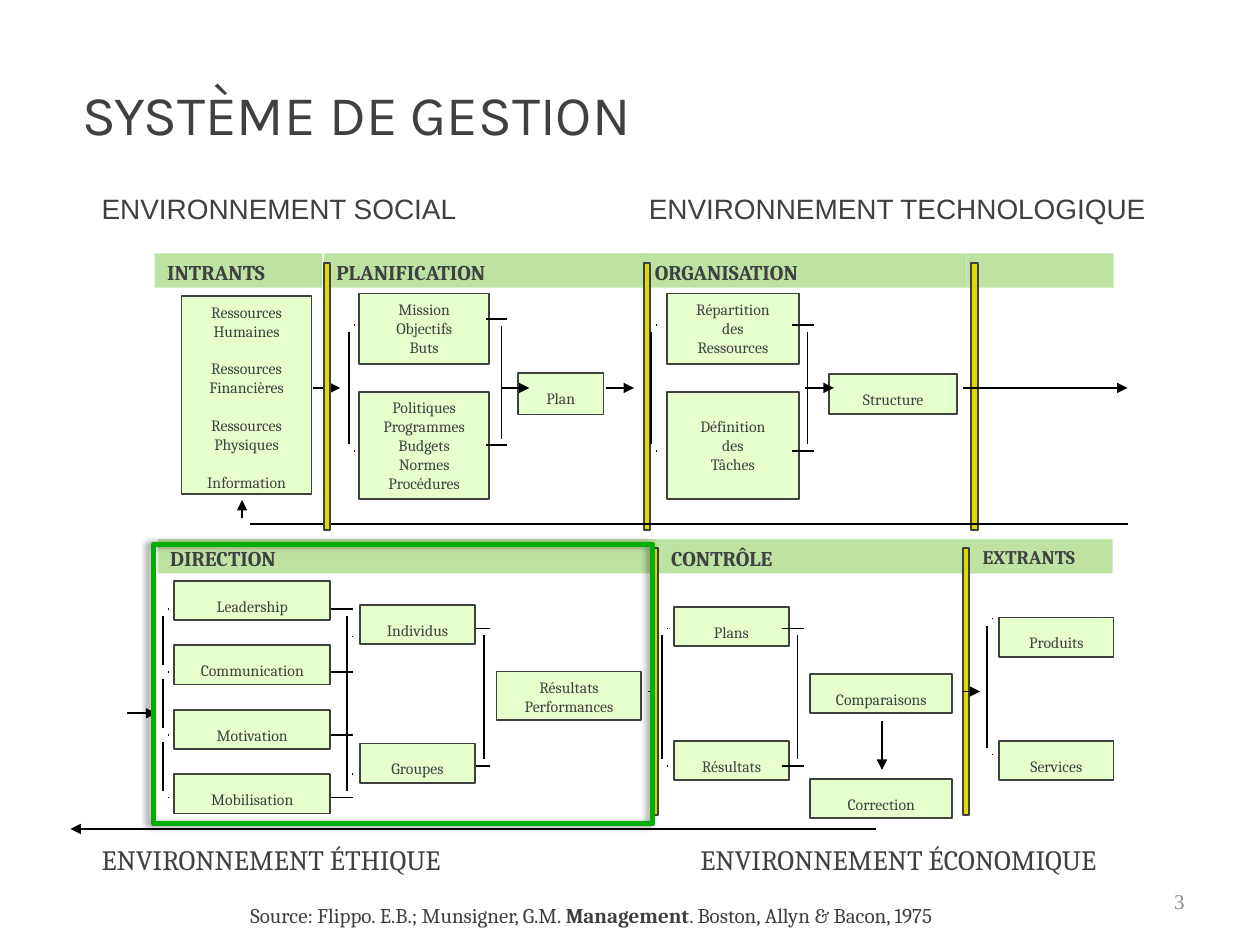
from lxml.etree import SubElement
from pptx import Presentation
from pptx.dml.color import RGBColor
from pptx.enum.shapes import MSO_CONNECTOR, MSO_SHAPE
from pptx.enum.text import MSO_ANCHOR, MSO_AUTO_SIZE, PP_ALIGN
from pptx.oxml import parse_xml
from pptx.oxml.ns import nsdecls, qn
from pptx.util import Cm, Pt

DARK = RGBColor(0x40, 0x40, 0x40)
GREY = RGBColor(0x8C, 0x8C, 0x8C)
BLACK = RGBColor(0x00, 0x00, 0x00)
PALE = RGBColor(0xE6, 0xFF, 0xCD)
GREEN = RGBColor(0xBD, 0xE2, 0xA2)
YELLOW = RGBColor(0xDF, 0xDA, 0x00)
FRAME = RGBColor(0x00, 0xAE, 0x00)


def write(tf, text, size=9, font="Cambria", color=DARK, bold=False,
          align=PP_ALIGN.LEFT, spacing=None, anchor=MSO_ANCHOR.TOP, wrap=True):
    """Fill a text frame: a newline starts a paragraph, a blank line a wider
    gap, and ** switches bold."""
    tf.word_wrap = wrap
    tf.auto_size = MSO_AUTO_SIZE.NONE
    tf.vertical_anchor = anchor
    first = True
    for block in text.split("\n\n"):
        for i, line in enumerate(block.split("\n")):
            p = tf.paragraphs[0] if first else tf.add_paragraph()
            p.alignment = align
            p.line_spacing = spacing
            if i == 0 and not first:
                p.space_before = Pt(size * 1.2)
            first = False
            for j, part in enumerate(line.split("**")):
                r = p.add_run()
                r.text = part
                r.font.name = font
                r.font.size = Pt(size)
                r.font.color.rgb = color
                r.font.bold = bold or j % 2 == 1


def add_line(x1, y1, x2, y2, arrow=False):
    cn = slide.shapes.add_connector(MSO_CONNECTOR.STRAIGHT,
                                    Cm(x1), Cm(y1), Cm(x2), Cm(y2))
    cn.line.color.rgb = BLACK
    cn.line.width = Pt(1)
    if arrow:
        SubElement(cn.line._get_or_add_ln(), qn("a:tailEnd"), type="triangle")
    SubElement(cn._element.spPr, qn("a:effectLst"))


prs = Presentation()
prs.slide_width, prs.slide_height = Cm(25.4), Cm(19.05)
slide = prs.slides.add_slide(prs.slide_layouts[5])

title = slide.shapes.title
title.left, title.top, title.width, title.height = Cm(1.4), Cm(1.47), Cm(22.63), Cm(3.38)
write(title.text_frame, "SYSTÈME DE GESTION", size=32, font="Karla")

# Process boxes
skills = ["Leadership", "Communication", "Motivation", "Mobilisation"]
boxes = [(3.51, 11.71 + 1.3 * i, 3.15, 0.79, skill) for i, skill in enumerate(skills)]
boxes += [
    (3.66, 5.97, 2.62, 3.99, "Ressources\nHumaines\n\nRessources\nFinancières\n\n"
                             "Ressources\nPhysiques\n\nInformation"),
    (7.24, 5.92, 2.62, 1.42, "Mission\nObjectifs\nButs"),
    (7.24, 7.9, 2.62, 2.16, "Politiques\nProgrammes\nBudgets\nNormes\nProcédures"),
    (10.44, 7.52, 1.73, 0.84, "Plan"),
    (13.44, 5.92, 2.67, 1.42, "Répartition\ndes\nRessources"),
    (13.44, 7.9, 2.67, 2.16, "Définition\ndes\nTâches"),
    (16.71, 7.54, 2.59, 0.81, "Structure"),
    (7.26, 12.19, 2.31, 0.79, "Individus"),
    (7.26, 14.99, 2.31, 0.79, "Groupes"),
    (10.01, 13.54, 2.92, 0.97, "Résultats\nPerformances"),
    (13.59, 12.24, 2.31, 0.79, "Plans"),
    (13.59, 14.94, 2.31, 0.79, "Résultats"),
    (16.33, 13.59, 2.87, 0.79, "Comparaisons"),
    (16.33, 15.7, 2.87, 0.79, "Correction"),
    (20.14, 12.45, 2.31, 0.79, "Produits"),
    (20.14, 14.94, 2.31, 0.79, "Services"),
]

# Header bands of the two rows, and the bars between stages
bands = [
    (3.12, 5.11, 3.38, 0.69, "INTRANTS"),
    (6.53, 5.11, 6.6, 0.69, "PLANIFICATION"),
    (12.95, 5.11, 6.53, 0.69, "ORGANISATION"),
    (19.48, 5.11, 2.97, 0.69, ""),
    (3.18, 10.87, 10.11, 0.69, "DIRECTION"),
    (13.28, 10.87, 6.4, 0.69, "CONTRÔLE"),
    (19.56, 10.87, 2.87, 0.69, "EXTRANTS"),
]
bars = [(x, y, 0.13, 5.38, "") for x, y in
        [(12.98, 5.31), (19.58, 5.31), (13.13, 11.05), (19.41, 11.05), (6.53, 5.31)]]

for group, fill in [(boxes, PALE), (bands, GREEN), (bars, YELLOW)]:
    for x, y, w, h, text in group:
        s = slide.shapes.add_shape(MSO_SHAPE.RECTANGLE, Cm(x), Cm(y), Cm(w), Cm(h))
        s.shadow.inherit = False
        s.fill.solid()
        s.fill.fore_color.rgb = fill
        if group is bands:
            s.line.fill.background()
        else:
            s.line.color.rgb = DARK
            s.line.width = Pt(1)
        if group is bands and text:
            write(s.text_frame, text, size=11 if text == "EXTRANTS" else 12, bold=True)
        elif text:
            write(s.text_frame, text, align=PP_ALIGN.CENTER,
                  spacing=None if "\n" in text else 1.5,
                  anchor=MSO_ANCHOR.MIDDLE if "Tâches" in text else MSO_ANCHOR.TOP)
planning_bar = s

# Brackets: x of the stem, heights of the ticks, tick length
SHORT, LONG = 0.02, 0.43
upper = [6.55, 9.09]
lower = [12.67, 15.44]
four = [12.27 + 1.27 * i for i in range(4)]
brackets = [
    (7.04, upper, SHORT), (10.11, [6.43, 8.97], LONG),
    (13.13, upper, SHORT), (16.28, upper, LONG),
    (3.28, four, SHORT), (6.99, four, LONG),
    (6.99, [12.83, 15.6], SHORT), (9.75, lower, 0.28),
    (13.34, lower, SHORT), (16.08, lower, LONG),
    (19.89, [12.47, 15.21], SHORT),
]
for x, ticks, length in brackets:
    for y in ticks:
        add_line(x + 0.12, y, x + 0.12 - length, y)
    for y1, y2 in zip(ticks, ticks[1:]):
        add_line(x, y1 + 0.14, x, y2 - 0.13)

# Flow arrows and the return line
for x1, x2 in [(6.3, 6.86), (10.11, 10.67), (12.22, 12.78), (16.23, 16.81), (19.41, 22.73)]:
    add_line(x1, 7.82, x2, 7.82, arrow=True)
add_line(2.57, 14.38, 3.15, 14.38, arrow=True)
add_line(13.06, 13.94, 13.21, 13.94)
add_line(19.41, 13.94, 19.76, 13.94, arrow=True)
add_line(17.78, 14.53, 17.78, 15.52, arrow=True)
add_line(17.65, 16.71, 1.42, 16.71, arrow=True)
add_line(5.03, 10.57, 22.73, 10.57)
add_line(4.88, 10.44, 4.88, 10.08, arrow=True)

# The planning bar lies over the lines that cross it
slide.shapes._spTree.append(planning_bar._element)

# Environments, source and slide number
labels = [
    (1.8, 3.73, 7.7, 0.97, "ENVIRONNEMENT SOCIAL", dict(size=16, font="Arial")),
    (12.83, 3.73, 10.59, 0.97, "ENVIRONNEMENT TECHNOLOGIQUE", dict(size=16, font="Arial")),
    (1.8, 16.87, 8.46, 0.94, "ENVIRONNEMENT ÉTHIQUE", dict(size=16)),
    (13.87, 16.87, 9.83, 0.94, "ENVIRONNEMENT ÉCONOMIQUE", dict(size=16)),
    (4.8, 18.06, 16.21, 0.76, "Source: Flippo. E.B.; Munsigner, G.M. **Management**"
                              ". Boston, Allyn & Bacon, 1975", dict(size=12)),
    (18.21, 17.65, 5.92, 1.02, "3", dict(size=12, font="Times New Roman", color=GREY,
                                         align=PP_ALIGN.RIGHT, anchor=MSO_ANCHOR.MIDDLE)),
]
for x, y, w, h, text, fmt in labels:
    tb = slide.shapes.add_textbox(Cm(x), Cm(y), Cm(w), Cm(h))
    write(tb.text_frame, text, wrap=text == "3", **fmt)

# Frame around the direction stage
frame = slide.shapes.add_shape(MSO_SHAPE.RECTANGLE, Cm(3.1), Cm(10.97), Cm(10.06), Cm(5.64))
frame.fill.background()
frame.line.color.rgb = FRAME
frame.line.width = Pt(3)
frame._element.spPr.append(parse_xml(
    f'<a:effectLst {nsdecls("a")}><a:outerShdw blurRad="50800" dist="38100" dir="10800000">'
    '<a:srgbClr val="000000"><a:alpha val="40000"/></a:srgbClr></a:outerShdw></a:effectLst>'))

prs.save("out.pptx")
